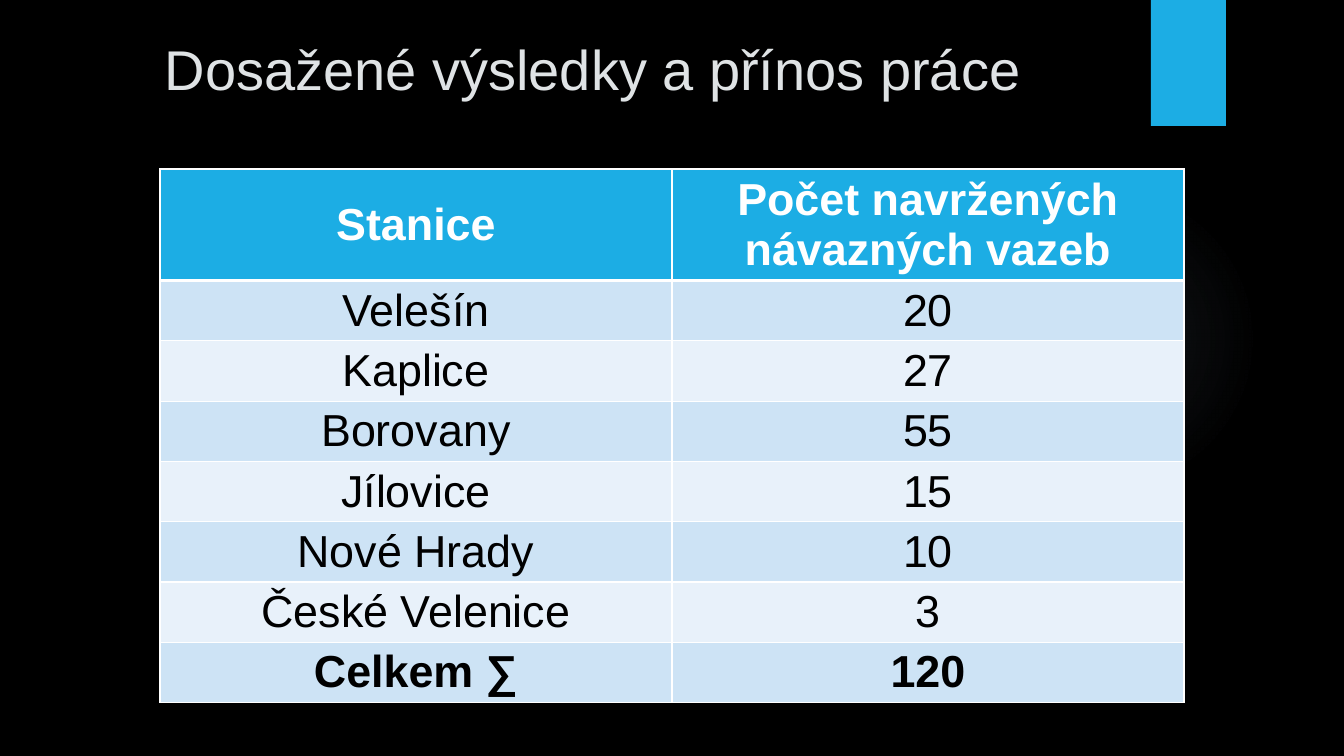
"""Builds the slide with the table of proposed connections per station."""
import lxml.etree
import pptx
import pptx.dml.color
import pptx.enum.shapes
import pptx.enum.text
import pptx.oxml
import pptx.oxml.ns
import pptx.util

PX = 914400 / 100.8
FONT = "Arial"
COLORS = {
    "background": "000000", "accent": "1CADE4", "title": "DFE3E5",
    "glow": "A0C1D5", "white": "FFFFFF", "black": "000000",
    "odd": "CDE3F5", "even": "E8F1FA",
}
GLOW_STOPS = [(0, 7), (36, 6), (69, 0)]
HEADER_HEIGHT = 111
HEADER_RULE = 2
ROWS = [
    ("Stanice", "Počet navržených návazných vazeb"),
    ("Velešín", "20"),
    ("Kaplice", "27"),
    ("Borovany", "55"),
    ("Jílovice", "15"),
    ("Nové Hrady", "10"),
    ("České Velenice", "3"),
    ("Celkem ∑", "120"),
]


def px(length):
    """Turn a length in px into EMU."""
    return pptx.util.Emu(round(length * PX))


def color(name):
    """Look up a colour by name."""
    return pptx.dml.color.RGBColor.from_string(COLORS[name])


def write(frame, text, size, color_name, bold=False):
    """Write one centred line of text into a frame."""
    para = frame.paragraphs[0]
    para.alignment = pptx.enum.text.PP_ALIGN.CENTER
    span = para.add_run()
    span.text = text
    span.font.name = FONT
    span.font.size = pptx.util.Pt(size)
    span.font.bold = bold
    span.font.color.rgb = color(color_name)


def add_plain_shape(page, kind, box):
    """Add a preset shape without line or shadow."""
    shape = page.shapes.add_shape(kind, *map(px, box))
    shape.shadow.inherit = False
    shape.line.fill.background()
    return shape


def add_backdrop(page, glow_box, tab_box):
    """Add the faint round glow and the accent tab on a dark background."""
    page.background.fill.solid()
    page.background.fill.fore_color.rgb = color("background")
    kinds = pptx.enum.shapes.MSO_SHAPE
    glow = add_plain_shape(page, kinds.OVAL, glow_box)
    stops = "".join(
        f'<a:gs pos="{place * 1000}"><a:srgbClr val="{COLORS["glow"]}">'
        f'<a:alpha val="{alpha * 1000}"/></a:srgbClr></a:gs>'
        for place, alpha in GLOW_STOPS
    )
    gradient = pptx.oxml.parse_xml(
        f'<a:gradFill {pptx.oxml.ns.nsdecls("a")}><a:gsLst>{stops}</a:gsLst>'
        '<a:path path="circle"><a:fillToRect l="50000" t="50000" r="50000" '
        'b="50000"/></a:path></a:gradFill>'
    )
    glow.fill.background()
    properties = glow.element.spPr
    blank_fill = properties.find(pptx.oxml.ns.qn("a:noFill"))
    properties.replace(blank_fill, gradient)
    tab = add_plain_shape(page, kinds.RECTANGLE, tab_box)
    tab.fill.solid()
    tab.fill.fore_color.rgb = color("accent")


def add_title(page, box, text):
    """Add the slide title."""
    frame = page.shapes.add_textbox(*map(px, box)).text_frame
    frame.word_wrap = True
    frame.margin_top = px(5)
    write(frame, text, 40, "title")


def add_border(cell, side, width):
    """Draw one white border of a cell."""
    properties = cell._tc.get_or_add_tcPr()
    line = lxml.etree.SubElement(
        properties, pptx.oxml.ns.qn(f"a:ln{side}"), w=str(pptx.util.Pt(width)))
    fill = lxml.etree.SubElement(line, pptx.oxml.ns.qn("a:solidFill"))
    lxml.etree.SubElement(
        fill, pptx.oxml.ns.qn("a:srgbClr"), val=COLORS["white"])


def add_station_table(page, box, rows):
    """Add the table with a header, banded rows and a bold total."""
    left, top, width, height = box
    table = page.shapes.add_table(
        len(rows), len(rows[0]), *map(px, box)).table
    for column in table.columns:
        column.width = px(width / len(rows[0]))
    row_height = (height - HEADER_HEIGHT) / (len(rows) - 1)
    for index, values in enumerate(rows):
        header = index == 0
        total = index == len(rows) - 1
        table.rows[index].height = px(HEADER_HEIGHT if header else row_height)
        band = "accent" if header else "odd" if index % 2 else "even"
        for cell, value in zip(table.rows[index].cells, values):
            cell.vertical_anchor = pptx.enum.text.MSO_ANCHOR.MIDDLE
            cell.margin_top = px(2)
            cell.margin_bottom = px(2)
            add_border(cell, "L", 1)
            add_border(cell, "R", 1)
            add_border(cell, "T", HEADER_RULE if index == 1 else 1)
            add_border(cell, "B", HEADER_RULE if header else 1)
            cell.fill.solid()
            cell.fill.fore_color.rgb = color(band)
            write(cell.text_frame, value, 32,
                  "white" if header else "black", header or total)


def main():
    """Build and save the deck."""
    deck = pptx.Presentation()
    deck.slide_width, deck.slide_height = px(1344), px(756)
    page = deck.slides.add_slide(deck.slide_layouts[6])
    add_backdrop(page, (949, 184, 310, 310), (1151, 0, 75, 126))
    add_title(page, (74, 30, 1037, 154), "Dosažené výsledky a přínos práce")
    add_station_table(page, (160, 169, 1024, 533), ROWS)
    deck.save("out.pptx")


if __name__ == "__main__":
    main()
